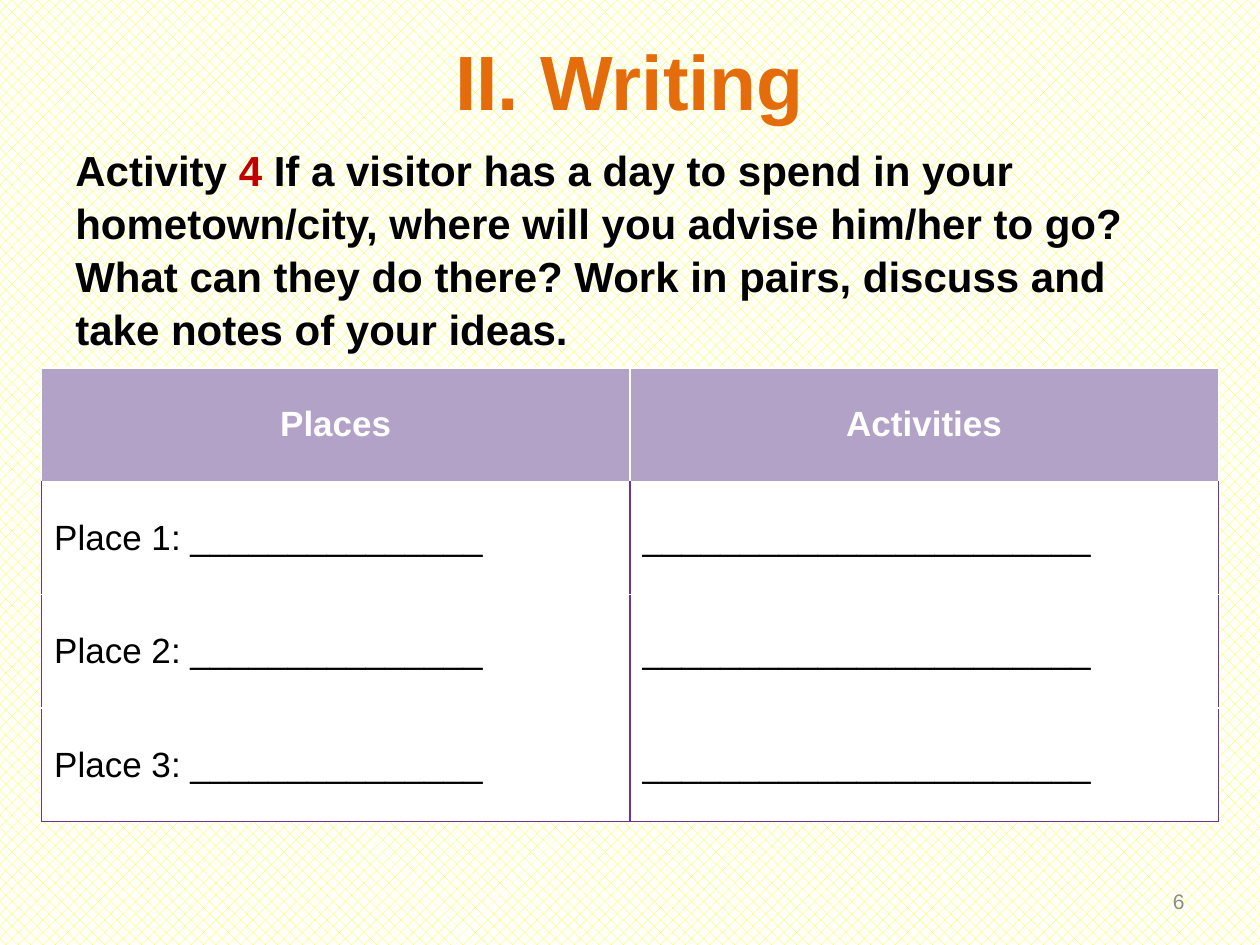
from lxml.etree import SubElement
from pptx import Presentation
from pptx.dml.color import RGBColor
from pptx.enum.dml import MSO_PATTERN
from pptx.enum.text import MSO_ANCHOR, PP_ALIGN
from pptx.oxml.ns import qn
from pptx.util import Inches, Pt

WHITE = RGBColor(0xFF, 0xFF, 0xFF)
BLACK = RGBColor(0, 0, 0)
YELLOW = RGBColor(0xFF, 0xFF, 0)
ORANGE = RGBColor(0xE4, 0x6C, 0x0A)
RED = RGBColor(0xC0, 0, 0)
GRAY = RGBColor(0x8C, 0x8C, 0x8C)
LILAC = RGBColor(0xB3, 0xA2, 0xC7)
PURPLE = RGBColor(0x70, 0x30, 0xA0)

HEADINGS = ["Places", "Activities"]
PLACE_COUNT = 3


def add_run(paragraph, text, size, color, bold=False):
    run = paragraph.add_run()
    run.text = text
    run.font.name = "Arial"
    run.font.size = Pt(size)
    run.font.bold = bold
    run.font.color.rgb = color


def add_text(slide, box, runs, size, bold=False, align=PP_ALIGN.LEFT,
             anchor=MSO_ANCHOR.MIDDLE):
    """Place one paragraph of (text, colour) runs in the box."""
    frame = slide.shapes.add_textbox(*map(Inches, box)).text_frame
    frame.word_wrap = True
    frame.vertical_anchor = anchor
    paragraph = frame.paragraphs[0]
    paragraph.alignment = align
    for text, color in runs:
        add_run(paragraph, text, size, color, bold)
    return paragraph


def set_borders(cell, **sides):
    """Draw the cell's L, R, T and B edges, each a (colour, points) pair."""
    properties = cell._tc.get_or_add_tcPr()
    for position, side in enumerate("LRTB"):
        color, width = sides[side]
        edge = SubElement(properties, qn(f"a:ln{side}"), w=str(Pt(width)))
        fill = SubElement(edge, qn("a:solidFill"))
        SubElement(fill, qn("a:srgbClr"), val=str(color))
        properties.remove(edge)
        properties.insert(position, edge)


def fill_cell(cell, text, fill, color, bold, align):
    cell.fill.solid()
    cell.fill.fore_color.rgb = fill
    cell.vertical_anchor = MSO_ANCHOR.MIDDLE
    paragraph = cell.text_frame.paragraphs[0]
    paragraph.alignment = align
    add_run(paragraph, text, 20, color, bold)


def add_notes_table(slide, box):
    left, top, width, height = map(Inches, box)
    table = slide.shapes.add_table(
        PLACE_COUNT + 1, len(HEADINGS), left, top, width, height).table

    # Heading row
    white_edge = (WHITE, 1)
    for column, heading in enumerate(HEADINGS):
        cell = table.cell(0, column)
        fill_cell(cell, heading, LILAC, WHITE, True, PP_ALIGN.CENTER)
        set_borders(cell, L=white_edge, R=white_edge, T=white_edge, B=white_edge)

    # One row of blanks for each place
    outer = (PURPLE, 1)
    for row in range(1, PLACE_COUNT + 1):
        last = row == PLACE_COUNT
        inner = outer if last else (PURPLE, 1.5)
        bottom = outer if last else white_edge
        blanks = [f"Place {row}: " + "_" * 15, "_" * 23]
        for column, blank in enumerate(blanks):
            cell = table.cell(row, column)
            fill_cell(cell, blank, WHITE, BLACK, False, PP_ALIGN.LEFT)
            set_borders(cell, L=inner if column else outer,
                        R=outer if column else inner, T=white_edge, B=bottom)


def add_instruction(slide, box):
    paragraph = add_text(slide, box, [
        ("Activity ", BLACK),
        ("4 ", RED),
        ("If a visitor has a day to spend in your hometown/city, where will "
         "you advise him/her to go? What can they do there? Work in pairs, "
         "discuss and take notes of your ideas.", BLACK),
    ], 24, bold=True, anchor=MSO_ANCHOR.TOP)
    paragraph.line_spacing = 1.05


def set_background(slide):
    fill = slide.background.fill
    fill.patterned()
    fill.pattern = MSO_PATTERN.PERCENT_30
    fill.fore_color.rgb = YELLOW
    fill.back_color.rgb = WHITE


def main():
    deck = Presentation()
    deck.slide_width, deck.slide_height = Inches(10), Inches(7.5)
    slide = deck.slides.add_slide(deck.slide_layouts[6])
    set_background(slide)

    # Title, instruction, page number and table
    add_text(slide, (0.5, 0.18, 9, 0.9), [("II. Writing", ORANGE)], 44,
             bold=True, align=PP_ALIGN.CENTER)
    add_instruction(slide, (0.5, 1.08, 9, 5.62))
    add_text(slide, (7.17, 6.95, 2.33, 0.4), [("6", GRAY)], 12,
             align=PP_ALIGN.RIGHT)
    add_notes_table(slide, (0.33, 2.92, 9.34, 3.6))
    deck.save("out.pptx")


if __name__ == "__main__":
    main()
